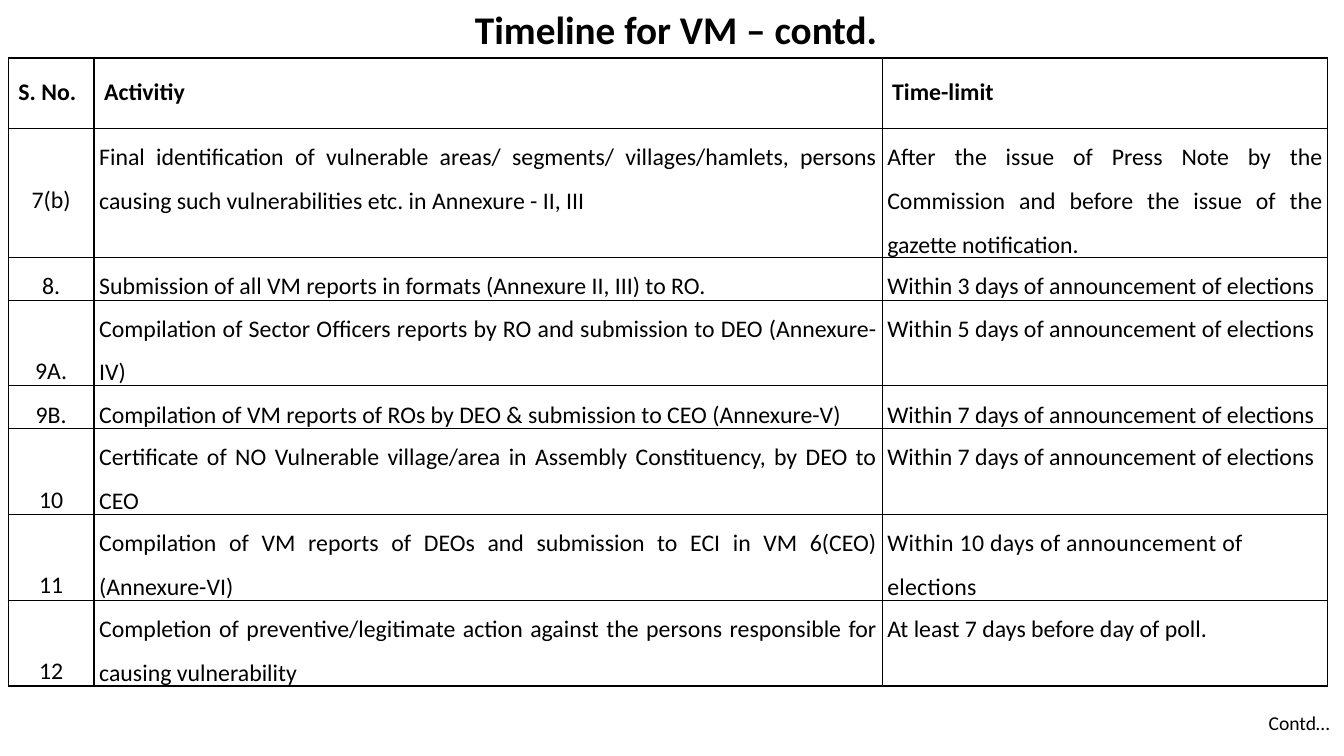
import pptx
import pptx.dml.color
import pptx.enum.text
import pptx.oxml
import pptx.oxml.ns
import pptx.util
from dataclasses import dataclass

Cm = pptx.util.Cm
Align = pptx.enum.text.PP_ALIGN
Anchor = pptx.enum.text.MSO_ANCHOR


@dataclass
class Theme:
    font: str = "Calibri"
    ink: str = "000000"
    title_size: int = 28
    table_size: int = 17
    footer_size: int = 14
    border_width: int = 1


theme = Theme()


def write(frame, text, size, bold=False, align=Align.LEFT, line_spacing=1.0):
    para = frame.paragraphs[0]
    para.alignment = align
    para.line_spacing = line_spacing
    span = para.add_run()
    span.text = text
    span.font.color.rgb = pptx.dml.color.RGBColor.from_string(theme.ink)
    font_format = {"name": theme.font, "size": pptx.util.Pt(size), "bold": bold}
    for name, value in font_format.items():
        setattr(span.font, name, value)
    return span


def add_borders(cell):
    properties = cell._tc.get_or_add_tcPr()
    for side in ("lnL", "lnR", "lnT", "lnB"):
        properties.append(pptx.oxml.parse_xml(
            f'<a:{side} {pptx.oxml.ns.nsdecls("a")} w="{pptx.util.Pt(theme.border_width)}">'
            f'<a:solidFill><a:srgbClr val="{theme.ink}"/></a:solidFill></a:{side}>'))


deck = pptx.Presentation()
deck.slide_width, deck.slide_height = Cm(33.87), Cm(19.05)
page = deck.slides.add_slide(deck.slide_layouts[6])

# Footer and title
footer = page.shapes.add_textbox(Cm(31.72), Cm(17.78), Cm(2.08), Cm(0.86))
footer.text_frame.word_wrap = False
write(footer.text_frame, "Contd…", theme.footer_size)

title = page.shapes.add_textbox(Cm(0.84), Cm(0), Cm(32.39), Cm(1.45))
title.text_frame.word_wrap = True
write(title.text_frame, "Timeline for VM – contd.", theme.title_size, True, Align.CENTER)

# Table content: lines of height, number, activity, time limit
header = ("S. No.", "Activitiy", "Time-limit")
activities = [
    (3, "7(b)", "Final identification of vulnerable areas/ segments/ villages/hamlets, persons "
     "causing such vulnerabilities etc. in Annexure - II, III",
     "After the issue of Press Note by the Commission and before the issue of the "
     "gazette notification."),
    (1, "8.", "Submission of all VM reports in formats (Annexure II, III) to RO.",
     "Within 3 days of announcement of elections"),
    (2, "9A.", "Compilation of Sector Officers reports by RO and submission to DEO (Annexure- IV)",
     "Within 5 days of announcement of elections"),
    (1, "9B.", "Compilation of VM reports of ROs by DEO & submission to CEO (Annexure-V)",
     "Within 7 days of announcement of elections"),
    (2, "10", "Certificate of NO Vulnerable village/area in Assembly Constituency, by DEO to CEO",
     "Within 7 days of announcement of elections"),
    (2, "11", "Compilation of VM reports of DEOs and submission to ECI in VM 6(CEO) (Annexure-VI)",
     "Within 10 days of announcement of elections"),
    (2, "12", "Completion of preventive/legitimate action against the persons responsible for "
     "causing vulnerability", "At least 7 days before day of poll."),
]
column_widths = (2.16, 19.86, 11.23)
header_height, line_height = 1.78, 1.08
row_heights = [header_height] + [line_height * entry[0] for entry in activities]

# Table grid
table = page.shapes.add_table(len(row_heights), len(column_widths), Cm(0.21), Cm(1.46),
                              Cm(sum(column_widths)), Cm(sum(row_heights))).table
table.first_row = table.horz_banding = False
for column, width in zip(table.columns, column_widths):
    column.width = Cm(width)
for row, height in zip(table.rows, row_heights):
    row.height = Cm(height)
for cell in table.iter_cells():
    add_borders(cell)
    cell.fill.background()

# Header row
for cell, label in zip(table.rows[0].cells, header):
    write(cell.text_frame, label, theme.table_size, True, line_spacing=1.5)

# Activity rows
cell_format = {"margin_left": Cm(0.13), "margin_right": Cm(0.13),
               "margin_top": 0, "margin_bottom": 0}
for row, (lines, *texts) in zip(list(table.rows)[1:], activities):
    activity_align = Align.JUSTIFY if lines > 1 else Align.LEFT
    limit_align = Align.JUSTIFY if lines == 3 else Align.LEFT
    for cell, text, align in zip(row.cells, texts, (Align.CENTER, activity_align, limit_align)):
        for name, value in cell_format.items():
            setattr(cell, name, value)
        span = write(cell.text_frame, text, theme.table_size, align=align, line_spacing=1.5)
        # Slightly opened letter spacing, in hundredths of a point
        if text.startswith("Within 10"):
            span._r.get_or_add_rPr().set("spc", "20")
    row.cells[0].vertical_anchor = Anchor.MIDDLE if lines == 3 else Anchor.BOTTOM

deck.save("out.pptx")
